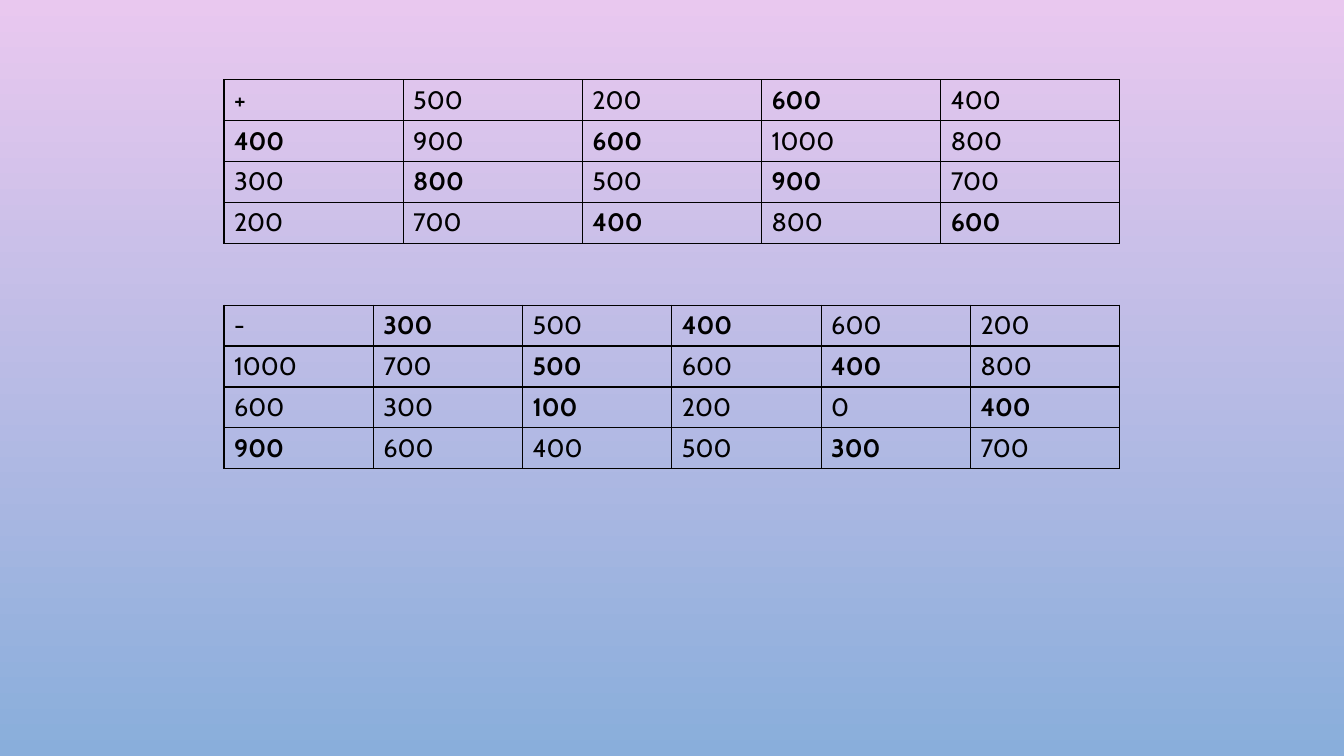
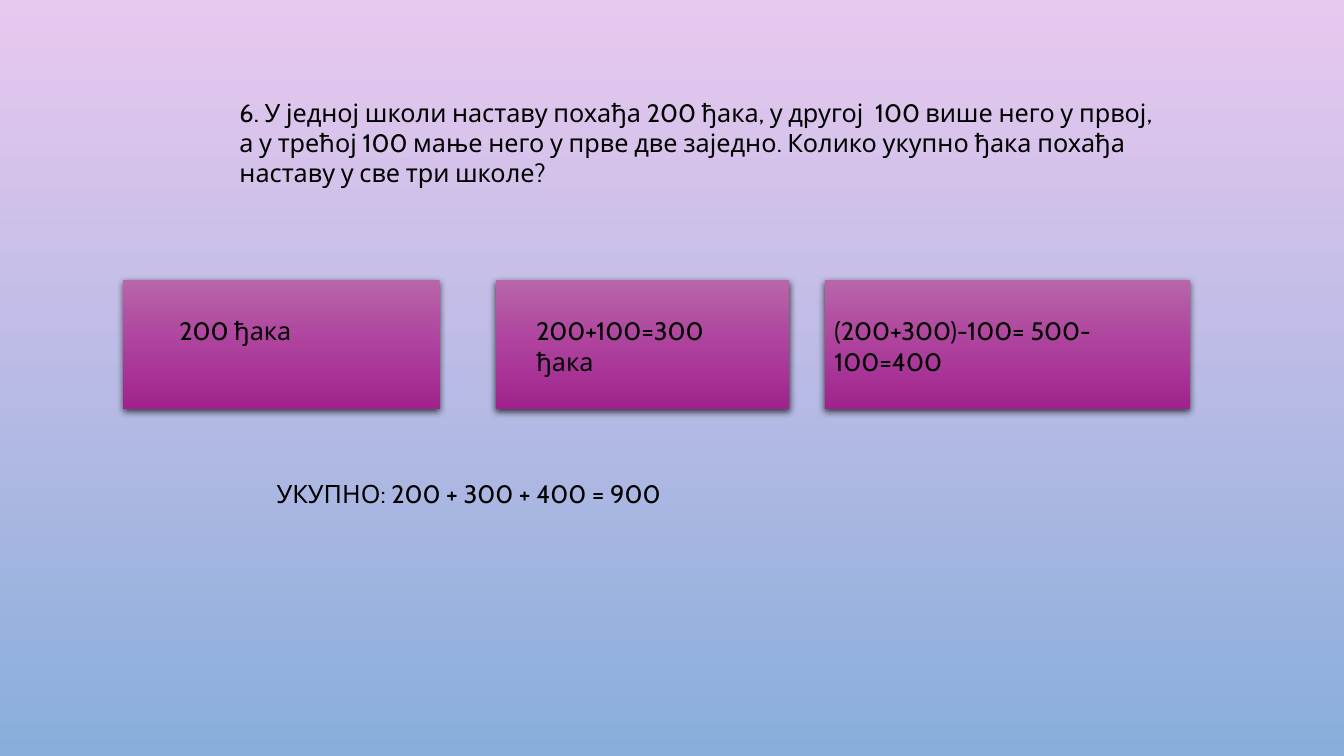
from copy import deepcopy

from lxml import etree
from pptx import Presentation
from pptx.dml.color import RGBColor
from pptx.enum.shapes import MSO_SHAPE
from pptx.oxml.ns import qn
from pptx.util import Pt

RECTANGLE = MSO_SHAPE.RECTANGLE
FONT = "Cabin"
TEXT_SIZE = 18
BLACK = "000000"
BACKGROUND = ("E9C8EF", "89AEDB")
CARD_FILL = ("B965AA", "AE429D", "A0228D")

TABLE_LEFT, TABLE_WIDTH, ROW_HEIGHT = 160, 640, 29.2
CARD_TOP, CARD_HEIGHT, CARD_TEXT_TOP = 200, 92, 222

# An asterisk marks a bold answer.
ADDITION = (
    "+ 500 200 600* 400",
    "400* 900 600* 1000 800",
    "300 800* 500 900* 700",
    "200 700 400* 800 600*",
)
SUBTRACTION = (
    "- 300* 500 400* 600 200",
    "1000 700 500* 600 400* 800",
    "600 300 100* 200 0 400*",
    "900* 600 400 500 300* 700",
)
PROBLEM = (
    "6. У једној школи наставу похађа 200 ђака, у другој  100 више него у првој, "
    "а у трећој 100 мање него у прве две заједно. "
    "Колико укупно ђака похађа наставу у све три школе?"
)
# Card left and width, text left and width, paragraphs
SCHOOLS = (
    (88, 226, 121, 148, ["200 ђака"]),
    (354, 210, 376, 154, ["200+100=300", "ђака"]),
    (589, 261, 589, 261, ["(200+300)-100= 500-100=400"]),
)


def rgb(value):
    return RGBColor.from_string(value)


def set_gradient(fill, owner, colours):
    """Fill from top to bottom with evenly spaced colours; owner holds the fill's XML."""
    fill.gradient()
    fill.gradient_angle = 270
    stop_list = owner.find(".//" + qn("a:gsLst"))
    while len(stop_list) < len(colours):
        stop_list.append(deepcopy(stop_list[0]))
    for index, (stop, colour) in enumerate(zip(fill.gradient_stops, colours)):
        stop.position = index / (len(colours) - 1)
        stop.color.rgb = rgb(colour)


def add_colour(parent, colour):
    return etree.SubElement(parent, qn("a:srgbClr"), val=colour)


def add_shadow(shape):
    shape.shadow.inherit = False
    effects = shape._element.spPr.find(qn("a:effectLst"))
    shadow = etree.SubElement(
        effects, qn("a:outerShdw"), blurRad=str(Pt(5)), dist=str(Pt(2)),
        dir="5400000", algn="ctr", rotWithShape="0")
    etree.SubElement(add_colour(shadow, BLACK), qn("a:alpha"), val="69000")


def add_run(paragraph, text, bold=False):
    run = paragraph.add_run()
    run.text = text
    run.font.name = FONT
    run.font.size = Pt(TEXT_SIZE)
    run.font.bold = bold
    run.font.color.rgb = rgb(BLACK)


def add_text(slide, left, top, width, height, paragraphs):
    frame = slide.shapes.add_textbox(
        Pt(left), Pt(top), Pt(width), Pt(height)).text_frame
    frame.word_wrap = True
    for index, text in enumerate(paragraphs):
        paragraph = frame.add_paragraph() if index else frame.paragraphs[0]
        add_run(paragraph, text)


def add_card(slide, left, width):
    card = slide.shapes.add_shape(
        RECTANGLE, Pt(left), Pt(CARD_TOP), Pt(width), Pt(CARD_HEIGHT))
    set_gradient(card.fill, card._element, CARD_FILL)
    card.line.fill.background()
    add_shadow(card)


def set_borders(cell):
    properties = cell._tc.get_or_add_tcPr()
    for index, side in enumerate(("lnL", "lnR", "lnT", "lnB")):
        border = etree.Element(qn("a:" + side), w=str(Pt(1)))
        add_colour(etree.SubElement(border, qn("a:solidFill")), BLACK)
        properties.insert(index, border)


def add_number_table(slide, top, lines):
    rows = [line.split() for line in lines]
    table = slide.shapes.add_table(
        len(rows), len(rows[0]), Pt(TABLE_LEFT), Pt(top),
        Pt(TABLE_WIDTH), Pt(ROW_HEIGHT * len(rows))).table
    table.first_row = False
    table.horz_banding = False
    for row_index, row in enumerate(rows):
        for column_index, number in enumerate(row):
            cell = table.cell(row_index, column_index)
            cell.fill.background()
            set_borders(cell)
            add_run(cell.text_frame.paragraphs[0], number.rstrip("*"),
                    number.endswith("*"))


def build_tables(slide):
    add_number_table(slide, 57, ADDITION)
    add_number_table(slide, 218, SUBTRACTION)


def build_problem(slide):
    add_text(slide, 164, 66, 670, 94, [PROBLEM])
    for left, width, text_left, text_width, paragraphs in SCHOOLS:
        add_card(slide, left, width)
        add_text(slide, text_left, CARD_TEXT_TOP, text_width,
                 ROW_HEIGHT * len(paragraphs), paragraphs)
    add_text(slide, 190.5, 338, 563, ROW_HEIGHT,
             ["УКУПНО: 200 + 300 + 400 = 900"])


def main():
    presentation = Presentation()
    presentation.slide_width = Pt(960)
    presentation.slide_height = Pt(540)
    master = presentation.slide_master
    set_gradient(master.background.fill, master._element, BACKGROUND)
    blank_layout = presentation.slide_layouts[6]
    for build in (build_tables, build_problem):
        build(presentation.slides.add_slide(blank_layout))
    presentation.save("out.pptx")


if __name__ == "__main__":
    main()
